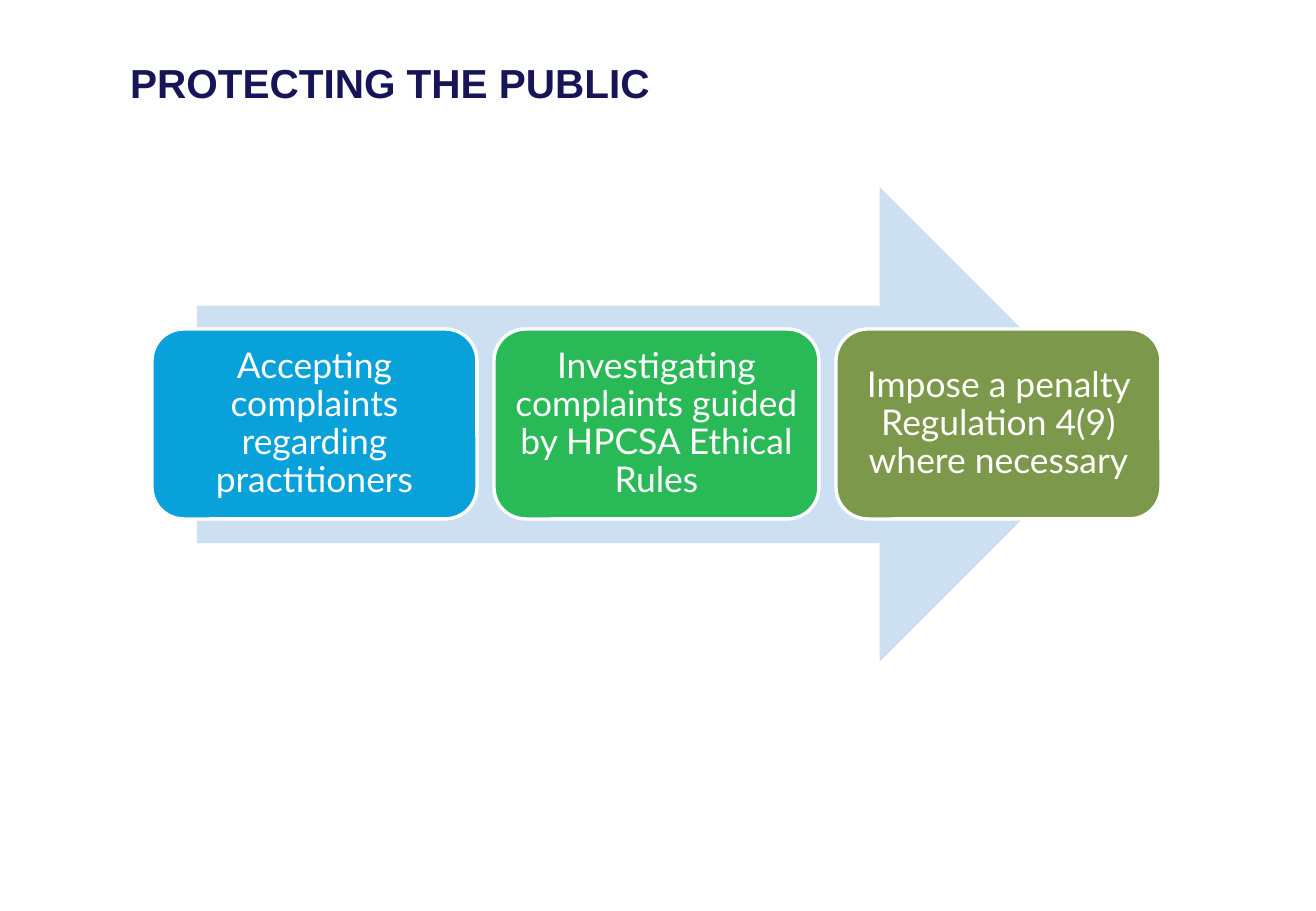
import pptx
import pptx.util
import pptx.dml.color
import pptx.enum.shapes
import pptx.enum.text
from dataclasses import dataclass

# Content
TITLE = "PROTECTING THE PUBLIC"
STEPS = [
    ("Accepting complaints regarding practitioners", "08A1D9"),
    ("Investigating complaints guided by HPCSA Ethical Rules", "29B956"),
    ("Impose a penalty Regulation 4(9) where necessary", "7C984A"),
]


@dataclass(frozen=True)
class Theme:
    navy: str = "171458"
    arrow: str = "CCE0F1"
    white: str = "FFFFFF"
    title_font: str = "Arial"
    step_font: str = "Lato"
    title_size: int = 24
    step_size: int = 21
    outline: int = 2


THEME = Theme()

# Layout in px
SLIDE = (1316, 911)
TITLE_BOX = (118, 49, 1082, 72)
ARROW_BOX = (197, 187, 920, 475)
STEP_LEFT, STEP_W, STEP_H, STEP_GAP = 152, 325, 190, 17
STEP_INSET = 11
STEP_TOP = ARROW_BOX[1] + (ARROW_BOX[3] - STEP_H) // 2  # centred on the arrow

SHAPE = pptx.enum.shapes.MSO_SHAPE
ALIGN = pptx.enum.text.PP_ALIGN
MIDDLE = pptx.enum.text.MSO_ANCHOR.MIDDLE


def px(n):
    return pptx.util.Emu(round(n * 914400 / 121.5))


def rgb(color):
    return pptx.dml.color.RGBColor.from_string(color)


def write(tf, text, font, size, color, align, bold=False):
    tf.word_wrap = True
    tf.vertical_anchor = MIDDLE
    p = tf.paragraphs[0]
    p.alignment = align
    p.line_spacing = 0.9
    r = p.add_run()
    r.text = text
    r.font.name, r.font.size, r.font.bold = font, pptx.util.Pt(size), bold
    r.font.color.rgb = rgb(color)


def add_shape(s, kind, box, fill):
    sp = s.shapes.add_shape(kind, *map(px, box))
    sp.shadow.inherit = False
    sp.fill.solid()
    sp.fill.fore_color.rgb = rgb(fill)
    sp.line.fill.background()
    return sp


def main():
    prs = pptx.Presentation()
    prs.slide_width, prs.slide_height = map(px, SLIDE)
    s = prs.slides.add_slide(prs.slide_layouts[5])

    # Title
    title = s.shapes.title
    title.left, title.top, title.width, title.height = map(px, TITLE_BOX)
    write(title.text_frame, TITLE, THEME.title_font, THEME.title_size,
          THEME.navy, ALIGN.LEFT, bold=True)

    # Arrow behind the steps
    add_shape(s, SHAPE.RIGHT_ARROW, ARROW_BOX, THEME.arrow)

    # Steps
    for i, (text, color) in enumerate(STEPS):
        left = STEP_LEFT + i * (STEP_W + STEP_GAP)
        step = add_shape(s, SHAPE.ROUNDED_RECTANGLE,
                         (left, STEP_TOP, STEP_W, STEP_H), color)
        step.line.color.rgb = rgb(THEME.white)
        step.line.width = pptx.util.Pt(THEME.outline)
        tf = step.text_frame
        tf.margin_left = tf.margin_right = px(STEP_INSET)
        tf.margin_top = tf.margin_bottom = px(STEP_INSET)
        write(tf, text, THEME.step_font, THEME.step_size,
              THEME.white, ALIGN.CENTER)

    prs.save("out.pptx")


if __name__ == "__main__":
    main()
